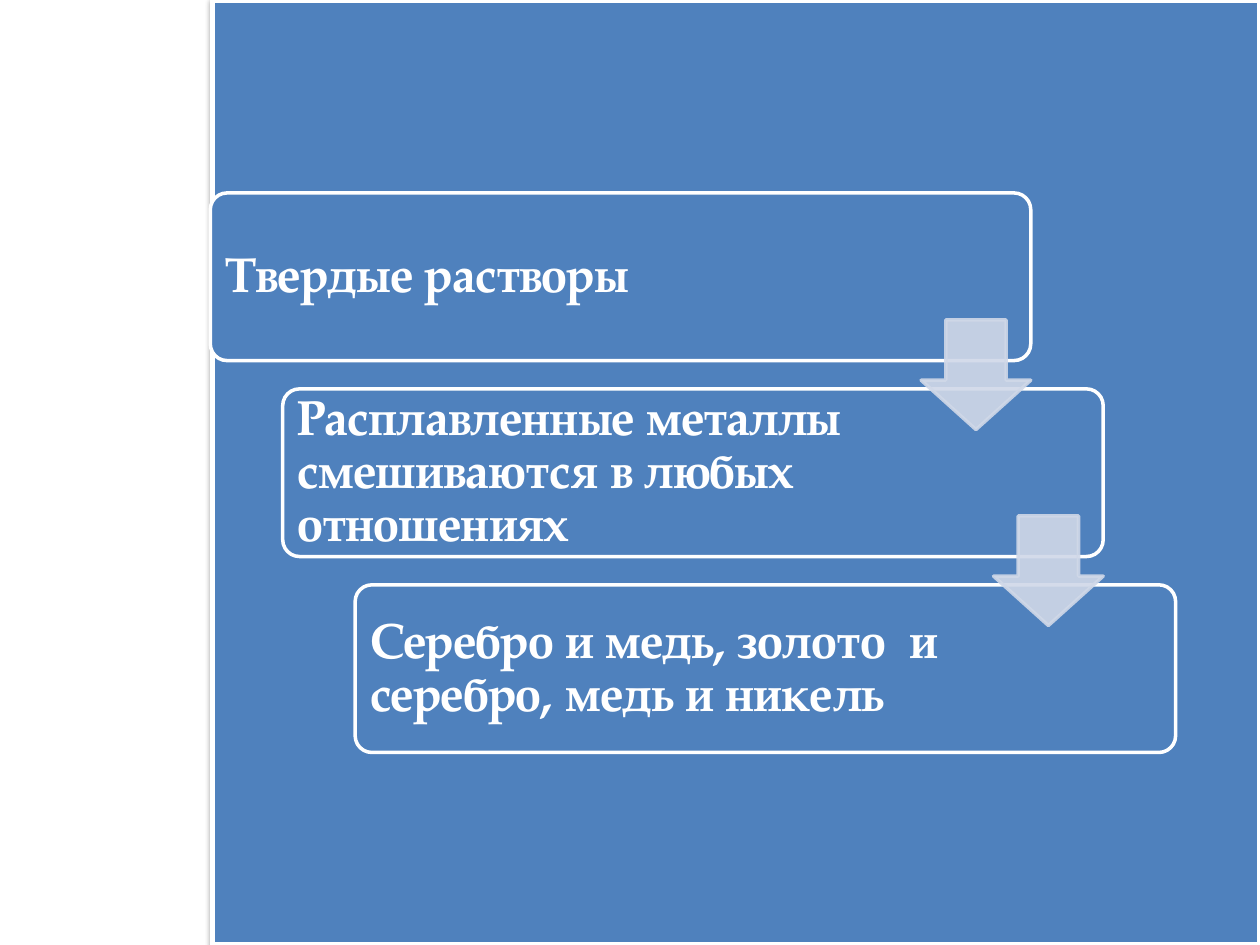
from lxml import etree
from pptx import Presentation
from pptx.dml.color import RGBColor
from pptx.enum.shapes import MSO_SHAPE as SHAPE
from pptx.enum.text import MSO_ANCHOR as ANCHOR
from pptx.oxml import parse_xml
from pptx.oxml.ns import nsdecls, qn
from pptx.util import Cm, Pt

BLUE, PALE, WHITE = "4F81BD", "D0D8E8", "FFFFFF"
STEP_X, STEP_Y = 1.46, 3.95


def rgb(value):
    return RGBColor.from_string(value)


def add_filled(kind, x, y, w, h, fill, line, width):
    sp = s.shapes.add_shape(kind, Cm(x), Cm(y), Cm(w), Cm(h))
    sp.shadow.inherit = False
    sp.fill.solid()
    sp.fill.fore_color.rgb = rgb(fill)
    sp.line.color.rgb = rgb(line)
    sp.line.width = Pt(width)
    return sp


prs = Presentation()
prs.slide_width, prs.slide_height = Cm(25.4), Cm(19.05)
s = prs.slides.add_slide(prs.slide_layouts[6])

# Background panel with a soft shadow
panel = add_filled(SHAPE.RECTANGLE, 4.29, 0, 21.11, 19.05, BLUE, WHITE, 3)
effects = panel._element.spPr.find(qn("a:effectLst"))
effects.append(parse_xml(
    f'<a:outerShdw {nsdecls("a")} blurRad="39370" dist="20320" dir="5400000" rotWithShape="0">'
    '<a:srgbClr val="000000"><a:alpha val="38000"/></a:srgbClr></a:outerShdw>'))

# Staircase of steps
steps = [
    ("Твердые растворы", 13.08),
    ("Расплавленные металлы смешиваются в любых отношениях", 12.88),
    ("Серебро и медь, золото  и серебро, медь и никель", 12.88),
]
for i, (text, text_width) in enumerate(steps):
    x, y = 4.24 + i * STEP_X, 3.89 + i * STEP_Y
    box = add_filled(SHAPE.ROUNDED_RECTANGLE, x, y, 16.54, 3.38, BLUE, WHITE, 2)
    box.adjustments[0] = 0.1

    label = s.shapes.add_textbox(Cm(x), Cm(y), Cm(text_width), Cm(3.38))
    tf = label.text_frame
    tf.word_wrap = True
    tf.vertical_anchor = ANCHOR.MIDDLE
    tf.margin_left = tf.margin_right = tf.margin_top = tf.margin_bottom = Cm(0.3)
    p = tf.paragraphs[0]
    p.line_spacing = 0.9
    r = p.add_run()
    r.text = text
    r.font.name = "TeX Gyre Pagella"
    r.font.size = Pt(28)
    r.font.bold = True
    r.font.color.rgb = rgb(WHITE)

# Translucent arrows between the steps
for i in range(len(steps) - 1):
    arrow = add_filled(SHAPE.DOWN_ARROW, 18.57 + i * STEP_X, 6.45 + i * STEP_Y,
                       2.21, 2.21, PALE, PALE, 2)
    arrow.adjustments[0] = 0.55
    arrow.adjustments[1] = 0.45
    for color in arrow._element.spPr.iter(qn("a:srgbClr")):
        etree.SubElement(color, qn("a:alpha"), val="90000")

prs.save("out.pptx")
